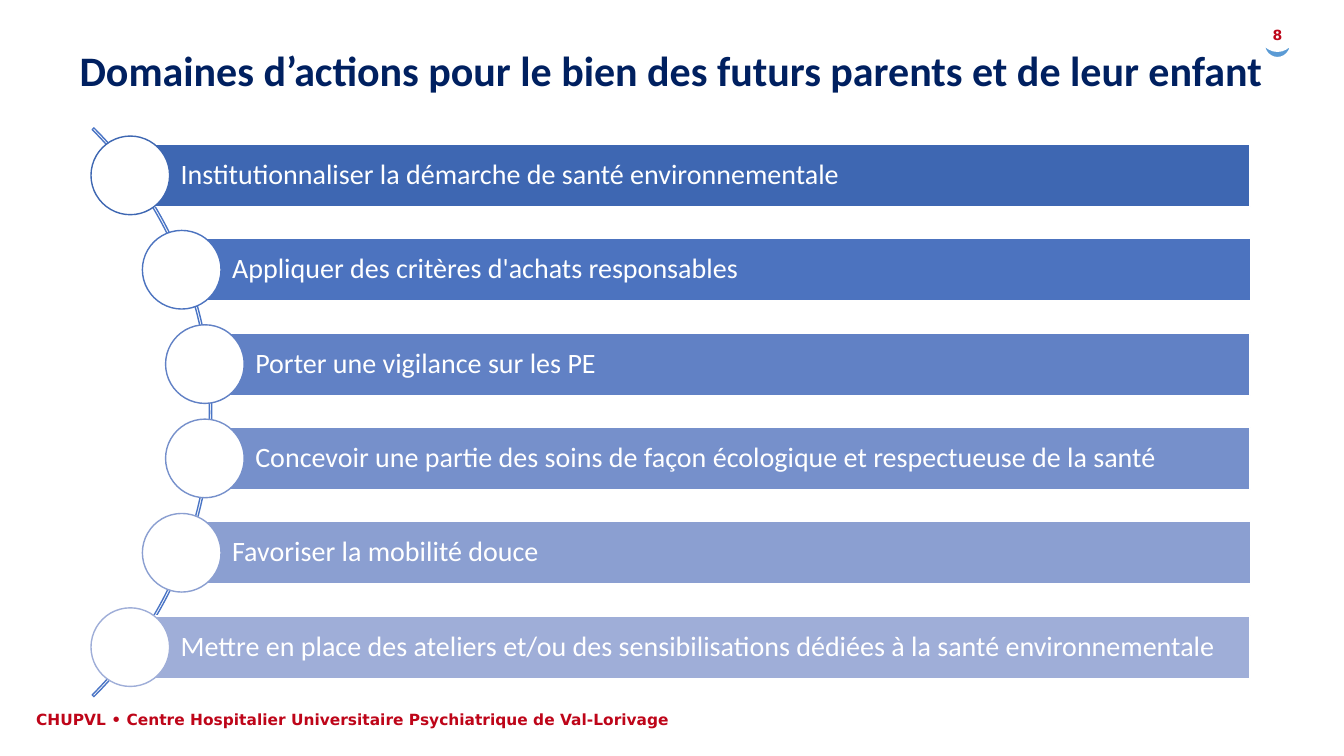
from math import sqrt

from pptx import Presentation
from pptx.dml.color import RGBColor
from pptx.enum.shapes import MSO_SHAPE
from pptx.enum.text import MSO_ANCHOR, PP_ALIGN
from pptx.util import Inches, Pt

ARC, BAR = MSO_SHAPE.BLOCK_ARC, MSO_SHAPE.RECTANGLE
DISC, MOON = MSO_SHAPE.OVAL, MSO_SHAPE.MOON
LEFT, CENTER = PP_ALIGN.LEFT, PP_ALIGN.CENTER
MIDDLE = MSO_ANCHOR.MIDDLE

WHITE = RGBColor(0xFF, 0xFF, 0xFF)
NAVY = RGBColor(0x00, 0x20, 0x60)
RED = RGBColor(0xBE, 0x05, 0x19)
SKY = RGBColor(0x5B, 0x9B, 0xD5)
BLUE = RGBColor(0x4A, 0x75, 0xC5)

ACTIONS = [
    ("Institutionnaliser la démarche de santé environnementale",
     RGBColor(0x3E, 0x67, 0xB2)),
    ("Appliquer des critères d'achats responsables",
     RGBColor(0x4C, 0x73, 0xBF)),
    ("Porter une vigilance sur les PE",
     RGBColor(0x61, 0x81, 0xC5)),
    ("Concevoir une partie des soins de façon écologique et respectueuse de la santé",
     RGBColor(0x76, 0x90, 0xCB)),
    ("Favoriser la mobilité douce",
     RGBColor(0x8B, 0x9F, 0xD1)),
    ("Mettre en place des ateliers et/ou des sensibilisations dédiées à la santé environnementale",
     RGBColor(0x9F, 0xAE, 0xD8)),
]

TITLE = dict(name="Calibri", size=Pt(30), bold=True)
LABEL = dict(name="Calibri", size=Pt(20), bold=False)
FOOTER = dict(name="DejaVu Sans", size=Pt(11), bold=True)
NUMBER = dict(name="DejaVu Sans", size=Pt(10), bold=True)

# Inches: the arc's centre and radius, and the radius on which the bars start
MID_X, MID_Y, ARC_R, BAR_R = -1.89, 4.09, 3.99, 3.95
RIGHT, BAR_H, DISC_D = 12.4, 0.62, 0.78
SPAN = 4.68  # from the first bar to the last


def add_shape(slide, kind, box, fill, line, width=1):
    """Add a preset shape; without a fill colour it stays hollow."""
    shape = slide.shapes.add_shape(kind, *map(Inches, box))
    shape.shadow.inherit = False
    if fill is None:
        shape.fill.background()
    else:
        shape.fill.solid()
        shape.fill.fore_color.rgb = fill
    shape.line.color.rgb = line
    shape.line.width = Pt(width)
    return shape


def set_text(shape, text, style, color, align=LEFT, spacing=1.0):
    frame = shape.text_frame
    frame.word_wrap = True
    para = frame.paragraphs[0]
    para.alignment = align
    para.line_spacing = spacing
    run = para.add_run()
    run.text = text
    for key, value in style.items():
        setattr(run.font, key, value)
    run.font.color.rgb = color


def add_label(slide, box, *args, **format):
    set_text(slide.shapes.add_textbox(*map(Inches, box)), *args, **format)


def add_action(slide, index, text, color):
    """Add one bar and its disc, placed along the arc."""
    rise = (index / (len(ACTIONS) - 1) - 0.5) * SPAN
    left = MID_X + sqrt(BAR_R ** 2 - rise ** 2)
    mid = MID_Y + rise - 0.01
    bar = add_shape(slide, BAR, (left, mid - BAR_H / 2, RIGHT - left, BAR_H),
                    color, WHITE)
    set_text(bar, text, LABEL, WHITE, spacing=0.9)
    frame = bar.text_frame
    frame.vertical_anchor = MIDDLE
    margins = dict(margin_left=0.5, margin_top=0.06,
                   margin_right=0.06, margin_bottom=0.06)
    for key, value in margins.items():
        setattr(frame, key, Inches(value))
    half = DISC_D / 2
    add_shape(slide, DISC, (left - half, mid - half, DISC_D, DISC_D),
              WHITE, color)


def add_arc(slide):
    arc = add_shape(slide, ARC, (MID_X - ARC_R, MID_Y - ARC_R,
                                 2 * ARC_R, 2 * ARC_R), None, BLUE)
    # Start and end angles of 315 and 45 degrees, then the thickness
    for index, value in enumerate((189, 27, 0.003)):
        arc.adjustments[index] = value


def main():
    deck = Presentation()
    deck.slide_width, deck.slide_height = Inches(13.33), Inches(7.5)
    slide = deck.slides.add_slide(deck.slide_layouts[6])

    add_label(slide, (0.26, 7, 7.22, 0.29),
              "CHUPVL • Centre Hospitalier Universitaire Psychiatrique de Val-Lorivage",
              FOOTER, RED)
    moon = add_shape(slide, MOON, (12.6, 0.37, 0.14, 0.27), SKY, WHITE, 1.5)
    moon.rotation = 270
    add_label(slide, (12.37, 0.21, 0.6, 0.27), "8", NUMBER, RED, align=CENTER)
    add_label(slide, (0.52, 0.45, 12.28, 0.67),
              "Domaines d’actions pour le bien des futurs parents et de leur enfant",
              TITLE, NAVY, align=CENTER, spacing=0.9)

    add_arc(slide)
    for index, (text, color) in enumerate(ACTIONS):
        add_action(slide, index, text, color)
    deck.save("out.pptx")


if __name__ == "__main__":
    main()
